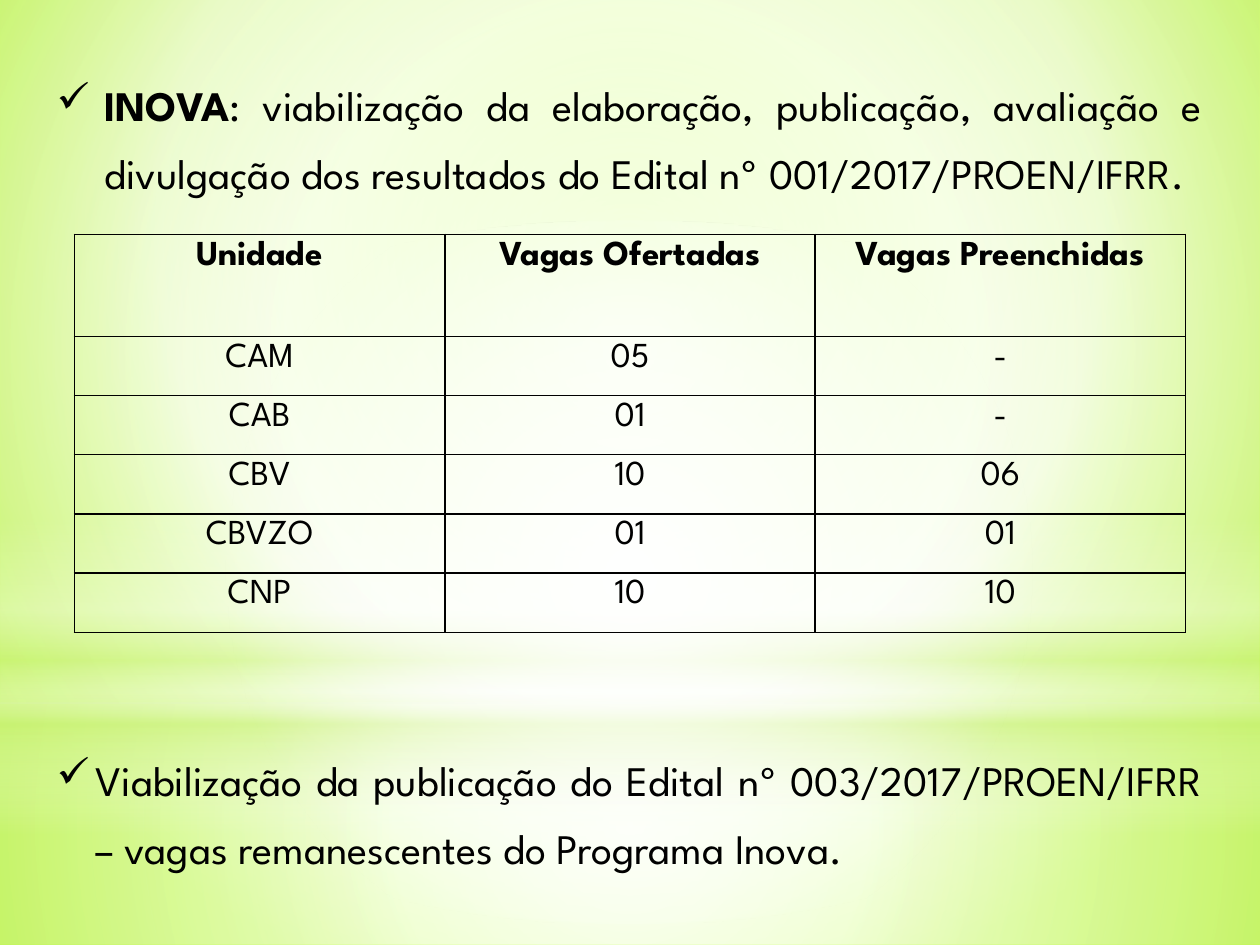
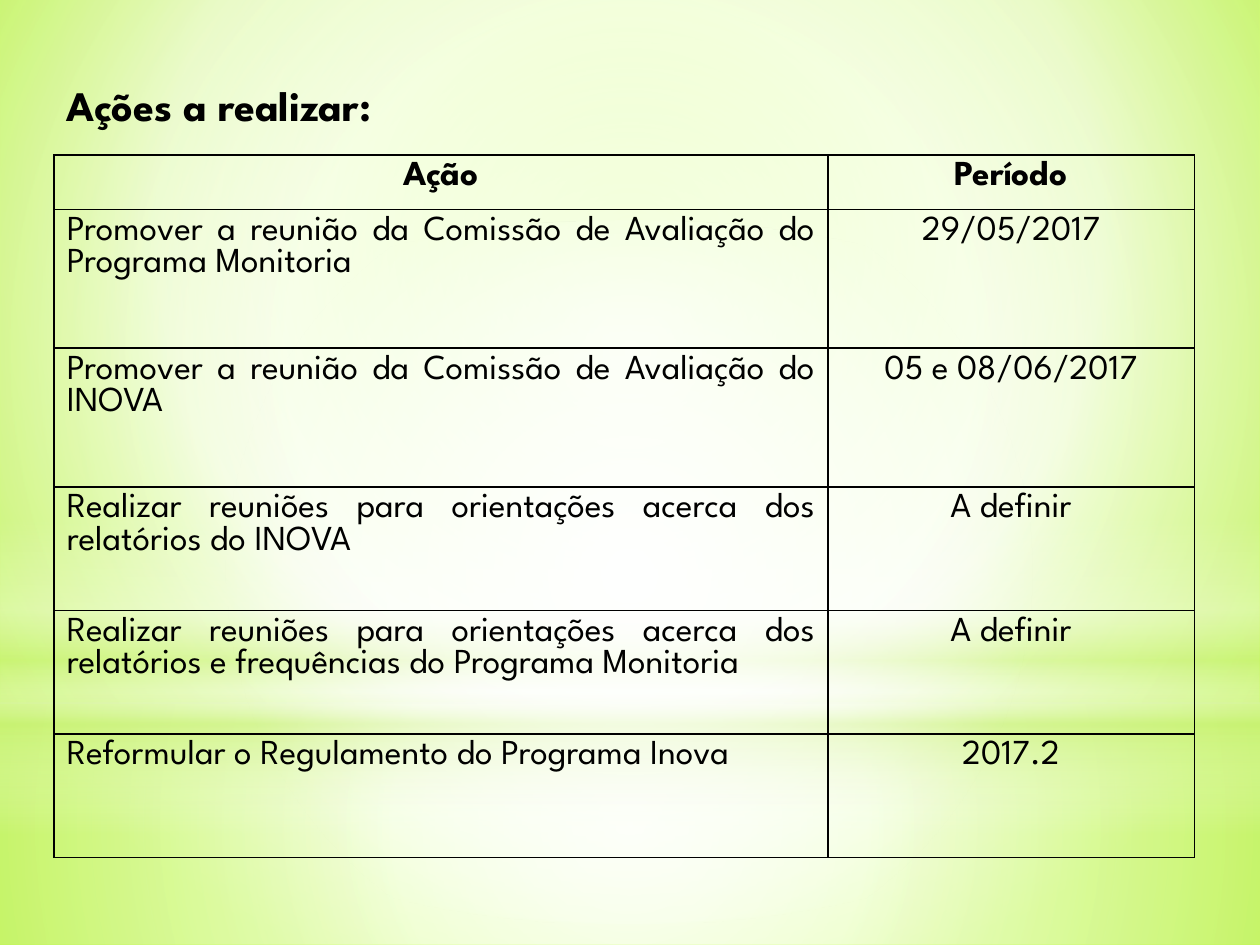
from lxml import etree
from pptx import Presentation
from pptx.dml.color import RGBColor
from pptx.enum.shapes import MSO_SHAPE
from pptx.enum.text import PP_ALIGN
from pptx.oxml import parse_xml
from pptx.oxml.ns import nsdecls, qn
from pptx.util import Inches, Pt

RECT, OVAL = MSO_SHAPE.RECTANGLE, MSO_SHAPE.OVAL
CENTER, JUSTIFY = PP_ALIGN.CENTER, PP_ALIGN.JUSTIFY

FONT = "League Spartan"
BLACK, WHITE, LIME = "000000", "FFFFFF", "CAF278"
BODY_SIZE, TABLE_SIZE = 24, 20
BODY_SPACING = 1.35
MIDDLE = (50, 50, 50, 50)

# Gradient stops: position %, colour, opacity %
PAGE_STOPS = [(0, "CAFF60", 100), (60, "F7FFE7", 100), (100, "B7FF29", 100)]
# Backdrop shapes: preset, top, height, stops, focus (None for a vertical gradient)
BACKDROP = [
    (RECT, 5.58, 1.92, [(0, WHITE, 91), (37, WHITE, 76), (100, LIME, 79)], MIDDLE),
    (RECT, 0, 5.58, [(0, WHITE, 89), (48, WHITE, 62), (100, LIME, 79)], MIDDLE),
    (RECT, 4.12, 2.5, [(0, WHITE, 0), (29, WHITE, 30), (45, LIME, 40),
                       (55, WHITE, 26), (65, LIME, 60), (100, WHITE, 0)], None),
    (OVAL, 1.75, 5.58, [(0, WHITE, 100), (56, WHITE, 0)], MIDDLE),
]


def rgb(color):
    return RGBColor.from_string(color)


def set_gradient(parent, stops, focus):
    """Swap the solid fill in parent for a gradient; focus is left, top, right, bottom in %."""
    gs = "".join(
        f'<a:gs pos="{pos * 1000}"><a:srgbClr val="{color}">'
        f'<a:alpha val="{alpha * 1000}"/></a:srgbClr></a:gs>'
        for pos, color, alpha in stops)
    if focus:
        l, t, r, b = (v * 1000 for v in focus)
        shade = (f'<a:path path="circle"><a:fillToRect l="{l}" t="{t}" '
                 f'r="{r}" b="{b}"/></a:path>')
    else:
        shade = '<a:lin ang="5400000" scaled="0"/>'
    grad = parse_xml(f'<a:gradFill {nsdecls("a")} rotWithShape="1">'
                     f'<a:gsLst>{gs}</a:gsLst>{shade}</a:gradFill>')
    parent.replace(parent.find(qn("a:solidFill")), grad)


class Deck:
    """Holds the shared style and the slide being built."""

    def __init__(self):
        self.prs = Presentation()
        self.prs.slide_width, self.prs.slide_height = Inches(10), Inches(7.5)
        self.s = None

    def slide(self):
        self.s = self.prs.slides.add_slide(self.prs.slide_layouts[6])
        self.s.background.fill.solid()
        bg = next(self.s.element.iter(qn("p:bgPr")))
        set_gradient(bg, PAGE_STOPS, (20, 10, 20, 60))
        for preset, top, height, stops, focus in BACKDROP:
            sp = self.s.shapes.add_shape(preset, 0, Inches(top), Inches(10), Inches(height))
            sp.shadow.inherit = False
            sp.line.fill.background()
            sp.fill.solid()
            set_gradient(sp.element.spPr, stops, focus)

    def run(self, p, text, size, bold=False):
        r = p.add_run()
        r.text = text
        r.font.name, r.font.size, r.font.bold = FONT, Pt(size), bold
        r.font.color.rgb = rgb(BLACK)

    def text(self, left, top, height, runs, indent=None):
        """Add a justified paragraph of (text, bold) runs, with a check mark if indented."""
        sp = self.s.shapes.add_textbox(Inches(left), Inches(top), Inches(9.29), Inches(height))
        tf = sp.text_frame
        tf.word_wrap = True
        p = tf.paragraphs[0]
        p.alignment, p.line_spacing = JUSTIFY, BODY_SPACING
        if indent:
            pPr = p._p.get_or_add_pPr()
            pPr.set("marL", str(Inches(indent)))
            pPr.set("indent", str(-Inches(indent)))
            etree.SubElement(pPr, qn("a:buChar")).set("char", "✓")
        for text, bold in runs:
            self.run(p, text, BODY_SIZE, bold)

    def border(self, cell):
        tcPr = cell._tc.get_or_add_tcPr()
        for side in "LRTB":
            tcPr.append(parse_xml(
                f'<a:ln{side} {nsdecls("a")} w="{Pt(1)}"><a:solidFill>'
                f'<a:srgbClr val="{BLACK}"/></a:solidFill></a:ln{side}>'))

    def table(self, left, top, widths, heights, rows, aligns):
        """Add a ruled table; aligns gives the body alignment of each column."""
        table = self.s.shapes.add_table(
            len(rows), len(widths), Inches(left), Inches(top),
            Inches(sum(widths)), Inches(sum(heights))).table
        table.first_row = table.horz_banding = False
        for column, width in zip(table.columns, widths):
            column.width = Inches(width)
        for i, (values, height) in enumerate(zip(rows, heights)):
            table.rows[i].height = Inches(height)
            for j, value in enumerate(values):
                cell = table.cell(i, j)
                self.border(cell)
                cell.fill.background()
                p = cell.text_frame.paragraphs[0]
                p.alignment = aligns[j] if i else CENTER
                self.run(p, value, TABLE_SIZE, bold=i == 0)


def vacancies_slide(deck):
    deck.slide()
    deck.text(0.35, 0.44, 1.31, [
        ("INOVA", True),
        (": viabilização da elaboração, publicação, avaliação e divulgação dos "
         "resultados do Edital nº 001/2017/PROEN/IFRR.", False)], indent=0.38)
    rows = [
        ("Unidade", "Vagas Ofertadas", "Vagas Preenchidas"),
        ("CAM", "05", "-"),
        ("CAB", "01", "-"),
        ("CBV", "10", "06"),
        ("CBVZO", "01", "01"),
        ("CNP", "10", "10"),
    ]
    deck.table(0.59, 1.86, [2.94] * 3, [0.81] + [0.47] * 5, rows, [CENTER] * 3)
    deck.text(0.35, 5.8, 1.31, [
        ("Viabilização da publicação do Edital nº 003/2017/PROEN/IFRR – vagas "
         "remanescentes do Programa Inova.", False)], indent=0.31)


def actions_slide(deck):
    deck.slide()
    deck.text(0.43, 0.44, 0.5, [("Ações a realizar:", True)])
    rows = [
        ("Ação", "Período"),
        ("Promover a reunião da Comissão de Avaliação do Programa Monitoria", "29/05/2017"),
        ("Promover a reunião da Comissão de Avaliação do INOVA", "05 e 08/06/2017"),
        ("Realizar reuniões para orientações acerca dos relatórios do INOVA", "A definir"),
        ("Realizar reuniões para orientações acerca dos relatórios e frequências "
         "do Programa Monitoria", "A definir"),
        ("Reformular o Regulamento do Programa Inova", "2017.2"),
    ]
    heights = [0.43] + [1.1] * 2 + [0.98] * 3
    deck.table(0.43, 1.23, [6.14, 2.91], heights, rows, [JUSTIFY, CENTER])


def main():
    deck = Deck()
    vacancies_slide(deck)
    actions_slide(deck)
    deck.prs.save("out.pptx")


if __name__ == "__main__":
    main()
